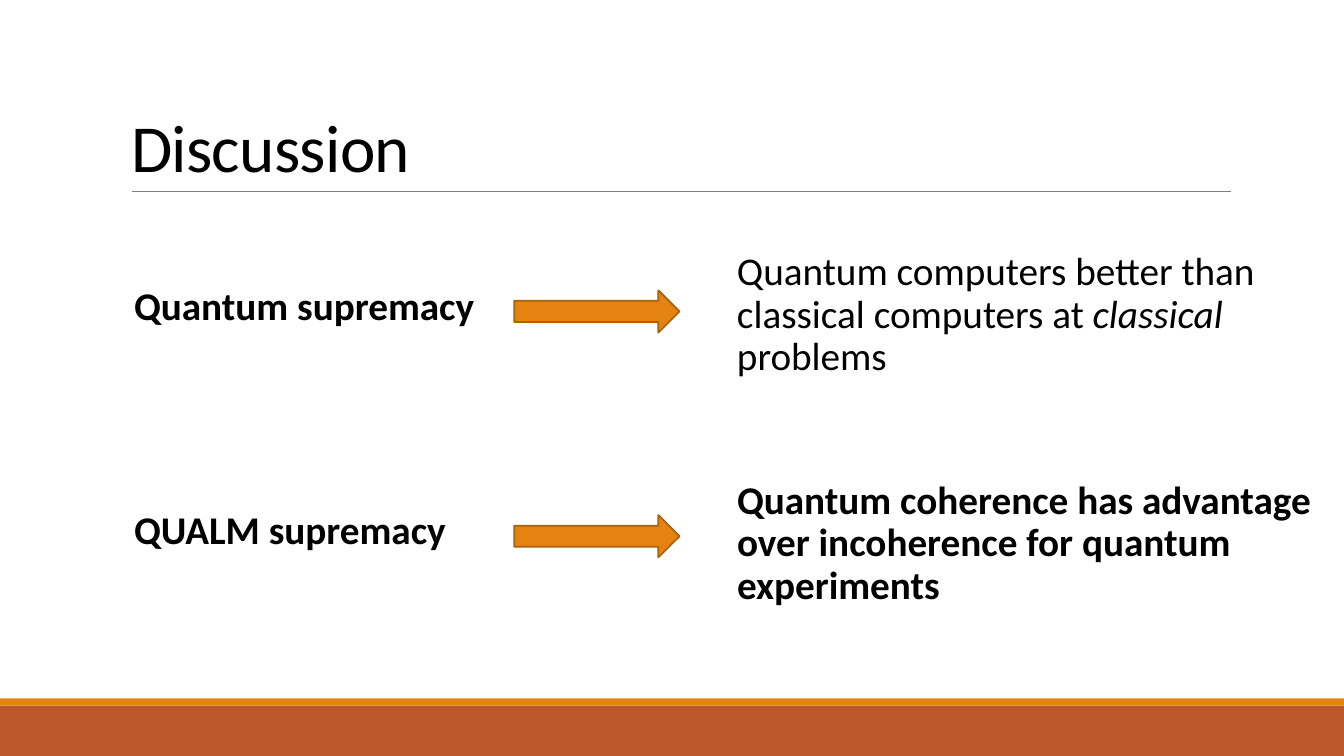
from pptx import Presentation, util as u
from pptx.dml.color import RGBColor
from pptx.enum import shapes, text
from pptx.oxml.ns import qn
from lxml import etree

BLACK, ORANGE, RUST = "000000", "E48312", "BD582C"
ARROW_EDGE, RULE_GREY = "A9610D", "808080"
BODY_PARAGRAPH = {"line_spacing": 0.9, "space_before": u.Pt(12), "space_after": u.Pt(2)}
BODY_FRAME = {"word_wrap": True, "margin_left": 0, "margin_right": 0,
              "margin_top": u.Inches(0.05), "margin_bottom": u.Inches(0.05)}


def color(value):
    return RGBColor.from_string(value)


def apply(target, values):
    for name, value in values.items():
        setattr(target, name, value)


def inches(*box):
    return [u.Inches(length) for length in box]


def add_run(paragraph, words, size, **style):
    run = paragraph.add_run()
    run.text = words
    apply(run.font, {"name": "Calibri", "size": u.Pt(size), **style})
    run.font.color.rgb = color(BLACK)
    return run


def add_filled(slide, kind, box, fill, edge=None):
    shape = slide.shapes.add_shape(kind, *inches(*box))
    shape.shadow.inherit = False
    shape.fill.solid()
    shape.fill.fore_color.rgb = color(fill)
    if edge:
        shape.line.color.rgb = color(edge)
        shape.line.width = u.Pt(1.25)
    else:
        shape.line.fill.background()


def add_body_text(slide, box, runs):
    frame = slide.shapes.add_textbox(*inches(*box)).text_frame
    apply(frame, BODY_FRAME)
    paragraph = frame.paragraphs[0]
    apply(paragraph, BODY_PARAGRAPH)
    for words, style in runs:
        add_run(paragraph, words, 28, **style)


def add_footer_bands(slide, left, top, width, height):
    stripe = 0.07
    rectangle = shapes.MSO_SHAPE.RECTANGLE
    add_filled(slide, rectangle, (left, top + stripe, width, height - stripe), RUST)
    add_filled(slide, rectangle, (left, top, width, stripe), ORANGE)


def add_title(slide, left, top, width, height):
    # Thin rule under the title
    bottom = top + height
    rule = slide.shapes.add_connector(
        shapes.MSO_CONNECTOR.STRAIGHT,
        *inches(left + 0.11, bottom, left + width + 0.01, bottom))
    rule.line.color.rgb = color(RULE_GREY)
    rule.line.width = u.Pt(0.5)
    etree.SubElement(rule._element.spPr, qn("a:effectLst"))

    # Title text
    title = slide.shapes.title
    apply(title, dict(zip(("left", "top", "width", "height"),
                          inches(left, top, width, height))))
    frame = title.text_frame
    apply(frame, {"vertical_anchor": text.MSO_ANCHOR.BOTTOM, "word_wrap": True,
                  "auto_size": text.MSO_AUTO_SIZE.NONE})
    paragraph = frame.paragraphs[0]
    apply(paragraph, {"alignment": text.PP_ALIGN.LEFT, "line_spacing": 0.85})
    run = add_run(paragraph, "Discussion", 48)
    run.font._element.set("spc", "-50")


def add_claim(slide, left, top, term, meaning, meaning_offset, meaning_width):
    # Term, arrow and its meaning, side by side
    add_body_text(slide, (left, top, 3.77, 0.79), [(term, {"bold": True})])
    add_filled(slide, shapes.MSO_SHAPE.RIGHT_ARROW,
               (left + 3.77, top + 0.09, 1.64, 0.42), ORANGE, ARROW_EDGE)
    add_body_text(slide, (left + 5.98, top + meaning_offset, meaning_width, 1.59), meaning)


def main():
    presentation = Presentation()
    apply(presentation, {"slide_width": u.Inches(13.33), "slide_height": u.Inches(7.5)})
    slide = presentation.slides.add_slide(presentation.slide_layouts[5])
    add_footer_bands(slide, 0, 6.93, 13.33, 0.57)
    add_title(slide, 1.2, 0.31, 11, 1.59)
    add_claim(slide, 1.33, 2.79, "Quantum supremacy", [
        ("Quantum computers better than classical computers at ", {}),
        ("classical", {"italic": True}),
        (" problems", {}),
    ], -0.34, 5.7)
    add_claim(slide, 1.33, 5.02, "QUALM supremacy", [
        ("Quantum coherence has advantage over incoherence for quantum experiments",
         {"bold": True}),
    ], -0.3, 5.89)
    presentation.save("out.pptx")


if __name__ == "__main__":
    main()
